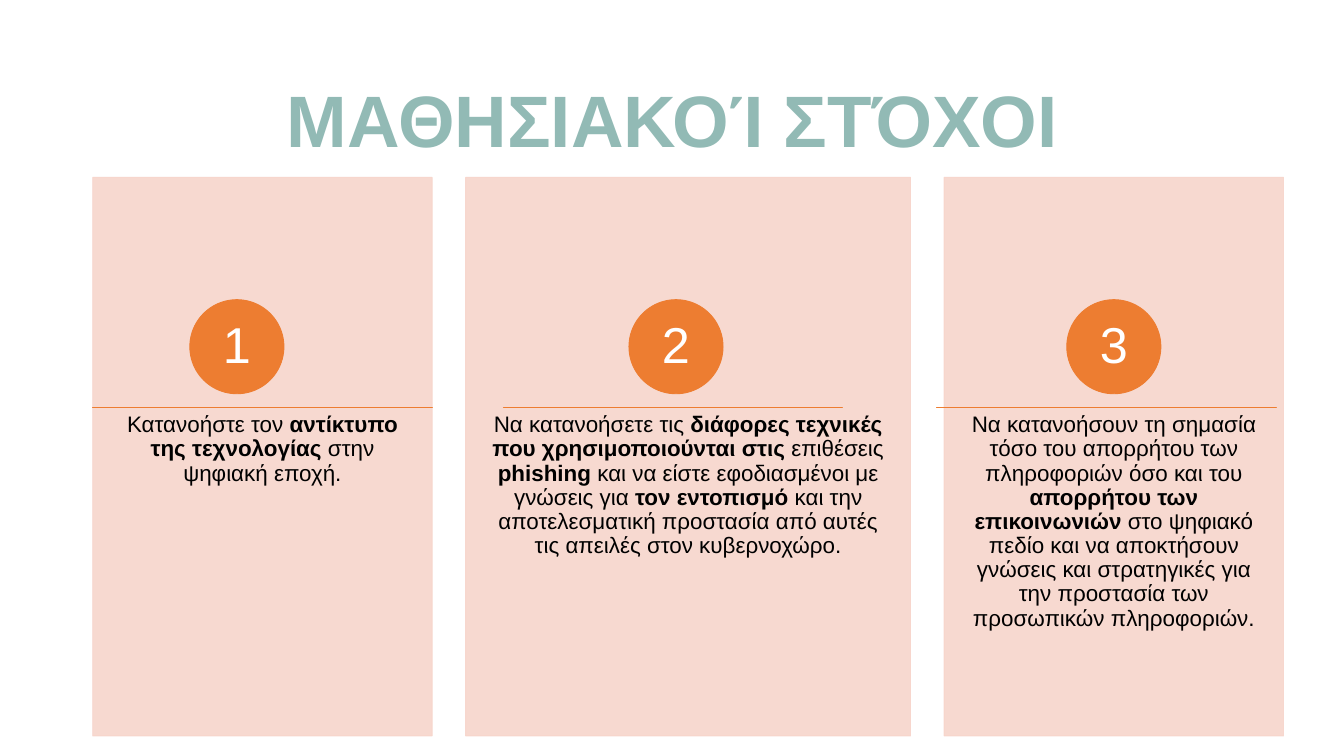
"""Build a slide with three numbered learning-goal cards."""
from dataclasses import dataclass

from lxml import etree
from pptx import Presentation
from pptx import util as u
from pptx.dml.color import RGBColor
from pptx.enum import shapes, text
from pptx.oxml import ns

TITLE = "ΜΑΘΗΣΙΑΚΟΊ ΣΤΌΧΟΙ"
GOALS = [
    {"width": 5.05, "badge_shift": -0.38, "rule_shift": 0,
     "runs": [("Κατανοήστε τον ", False), ("αντίκτυπο της τεχνολογίας ", True),
              ("στην ψηφιακή εποχή.", False)]},
    {"width": 6.62, "badge_shift": -0.18, "rule_shift": -0.23,
     "runs": [("Να κατανοήσετε τις ", False),
              ("διάφορες τεχνικές που χρησιμοποιούνται στις ", True),
              ("επιθέσεις ", False), ("phishing ", True),
              ("και να είστε εφοδιασμένοι με γνώσεις για ", False),
              ("τον εντοπισμό ", True),
              ("και την αποτελεσματική προστασία από αυτές τις απειλές "
               "στον κυβερνοχώρο.", False)]},
    {"width": 5.05, "badge_shift": 0, "rule_shift": -0.11,
     "runs": [("Να κατανοήσουν τη σημασία τόσο του απορρήτου των "
               "πληροφοριών όσο και του ", False),
              ("απορρήτου των επικοινωνιών ", True),
              ("στο ψηφιακό πεδίο και να αποκτήσουν γνώσεις και στρατηγικές "
               "για την προστασία των προσωπικών πληροφοριών.", False)]},
]


@dataclass(frozen=True)
class Theme:
    font: str = "Arial"
    title: str = "92BAB5"
    card: str = "F7D5CB"
    accent: str = "ED7D31"
    ink: str = "000000"
    light: str = "FFFFFF"
    title_size: int = 78
    badge_size: int = 54
    body_size: int = 24
    card_opacity: int = 90


T = Theme()
WIDTH, HEIGHT = 20, 11.25
LEFT, GAP = 1.38, 0.5
CARD_TOP, CARD_HEIGHT = 2.64, 8.31
BADGE_TOP, BADGE = 4.46, 1.4
RULE_TOP, RULE_WIDTH = 6.06, 5.05
BODY_TOP, BODY_HEIGHT = 5.79, 4.98


def add_box(s, kind, box, color, opacity=100):
    sp = s.shapes.add_shape(kind, *map(u.Inches, box))
    sp.shadow.inherit = False
    sp.fill.solid()
    sp.line.width = u.Pt(1)
    for paint in (sp.fill, sp.line.fill):
        paint.solid()
        paint.fore_color.rgb = RGBColor.from_string(color)
    if opacity < 100:
        for clr in sp._element.spPr.iter(ns.qn("a:srgbClr")):
            etree.SubElement(clr, ns.qn("a:alpha"), val=str(opacity * 1000))
    return sp


def write(sp, runs, size, color, insets, anchor=text.MSO_ANCHOR.MIDDLE):
    tf = sp.text_frame
    tf.word_wrap = True
    tf.vertical_anchor = anchor
    tf.margin_left = tf.margin_right = u.Inches(insets[0])
    tf.margin_top = tf.margin_bottom = u.Inches(insets[1])
    p = tf.paragraphs[0]
    p.alignment = text.PP_ALIGN.CENTER
    p.line_spacing = 0.9
    p.font.name = T.font
    p.font.size = u.Pt(size)
    p.font.color.rgb = RGBColor.from_string(color)
    for words, bold in runs:
        r = p.add_run()
        r.text = words
        r.font.bold = bold


def add_goal(s, number, goal, left):
    width = goal["width"]
    center = left + width / 2
    kinds = shapes.MSO_SHAPE
    add_box(s, kinds.RECTANGLE, (left, CARD_TOP, width, CARD_HEIGHT),
            T.card, T.card_opacity)
    body = s.shapes.add_textbox(
        *map(u.Inches, (left, BODY_TOP, width, BODY_HEIGHT)))
    write(body, goal["runs"], T.body_size, T.ink, (0.39, 0.36),
          text.MSO_ANCHOR.TOP)
    badge_left = center + goal["badge_shift"] - BADGE / 2
    badge = add_box(s, kinds.OVAL, (badge_left, BADGE_TOP, BADGE, BADGE),
                    T.accent)
    write(badge, [(str(number), False)], T.badge_size, T.light, (0.11, 0.01))
    rule_left = center + goal["rule_shift"] - RULE_WIDTH / 2
    add_box(s, kinds.RECTANGLE, (rule_left, RULE_TOP, RULE_WIDTH, 0), T.accent)


def main():
    prs = Presentation()
    prs.slide_width, prs.slide_height = u.Inches(WIDTH), u.Inches(HEIGHT)
    s = prs.slides.add_slide(prs.slide_layouts[6])
    title = s.shapes.add_textbox(*map(u.Inches, (LEFT, 0.91, 17.25, 1.86)))
    write(title, [(TITLE, True)], T.title_size, T.title, (0.1, 0.05))
    left = LEFT
    for number, goal in enumerate(GOALS, 1):
        add_goal(s, number, goal, left)
        left += goal["width"] + GAP
    prs.save("out.pptx")


if __name__ == "__main__":
    main()
